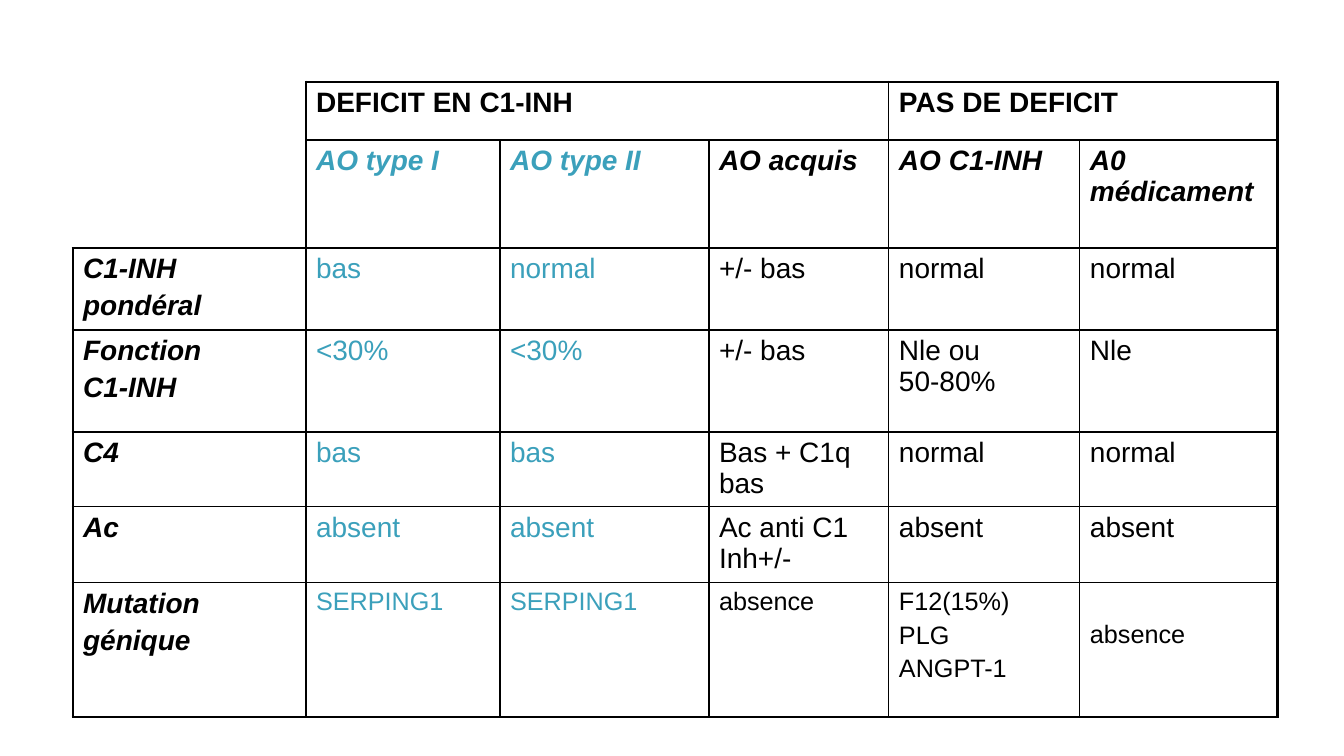
from lxml import etree
from pptx import Presentation
from pptx.dml.color import RGBColor
from pptx.oxml.ns import qn
from pptx.util import Pt

PX = 914400 / 100.8
FONT, BLACK, TEAL = "Arial", "000000", "3BA0BB"
THIN, THICK = 1, 2.25
LEFT, TOP = 73, 82
COLS = [233, 194, 209, 180, 191, 198]
ROWS = [58, 108, 82, 102, 75, 76, 134]
MERGES = [((0, 0), (1, 0)), ((0, 1), (0, 3)), ((0, 4), (0, 5))]
DATA = [
    ["", "DEFICIT EN C1-INH", "", "", "PAS DE DEFICIT", ""],
    ["", "AO type I", "AO type II", "AO acquis", "AO C1-INH", "A0 médicament"],
    ["C1-INH\npondéral", "bas", "normal", "+/- bas", "normal", "normal"],
    ["Fonction\nC1-INH", "<30%", "<30%", "+/- bas", "Nle ou \v50-80%", "Nle"],
    ["C4", "bas", "bas", "Bas + C1q bas", "normal", "normal"],
    ["Ac", "absent", "absent", "Ac anti C1 Inh+/-", "absent", "absent"],
    ["Mutation\ngénique", "SERPING1", "SERPING1", "absence",
     "F12(15%)\nPLG\nANGPT-1", "absence"],
]
LAST_ROW, LAST_COL = len(ROWS) - 1, len(COLS) - 1


def emu(px):
    """Turn px into EMU."""
    return round(px * PX)


def rgb(code):
    """Turn a hex string into a colour."""
    return RGBColor.from_string(code)


def edge(cell, side, width):
    """Draw one border of a cell, or clear it when the width is zero."""
    props = cell._tc.get_or_add_tcPr()
    line = etree.SubElement(props, qn(f"a:ln{side}"), w=str(Pt(width)))
    if width:
        fill = etree.SubElement(line, qn("a:solidFill"))
        etree.SubElement(fill, qn("a:srgbClr"), val=BLACK)
    else:
        etree.SubElement(line, qn("a:noFill"))


def frame(cell, row, col):
    """Set thick outer and thin inner borders, leaving the corner open."""
    corner = row < 2 and col == 0
    end = col + max(1, cell.span_width) - 1
    outer = {"L": col == 0, "R": end == LAST_COL,
             "T": row == 0, "B": row == LAST_ROW}
    for side, thick in outer.items():
        hide = corner and side in "LT"
        edge(cell, side, 0 if hide else THICK if thick else THIN)
    cell.fill.background()


def write(cell, row, col, text):
    """Put text in a cell and style it by its place in the grid."""
    size = 18 if row == LAST_ROW and col else 20
    cell.text_frame.text = text
    for i, para in enumerate(cell.text_frame.paragraphs):
        if i:
            para.space_before = Pt(size * 0.2)
        for run in para.runs:
            font = run.font
            font.name, font.size = FONT, Pt(size)
            font.bold = row < 2 or col == 0
            font.italic = row == 1 or col == 0
            font.color.rgb = rgb(TEAL if row and col in (1, 2) else BLACK)


def main():
    """Build the table slide."""
    deck = Presentation()
    deck.slide_width, deck.slide_height = emu(1344), emu(756)
    slide = deck.slides.add_slide(deck.slide_layouts[6])
    table = slide.shapes.add_table(
        len(ROWS), len(COLS), emu(LEFT), emu(TOP),
        emu(sum(COLS)), emu(sum(ROWS))).table
    table.first_row = table.horz_banding = False
    for col, width in zip(table.columns, COLS):
        col.width = emu(width)
    for row, height in zip(table.rows, ROWS):
        row.height = emu(height)
    for start, stop in MERGES:
        table.cell(*start).merge(table.cell(*stop))
    for r, line in enumerate(DATA):
        for c, text in enumerate(line):
            cell = table.cell(r, c)
            frame(cell, r, c)
            if text:
                write(cell, r, c, text)
    table.cell(LAST_ROW, LAST_COL).margin_top = emu(38)
    deck.save("out.pptx")


if __name__ == "__main__":
    main()
